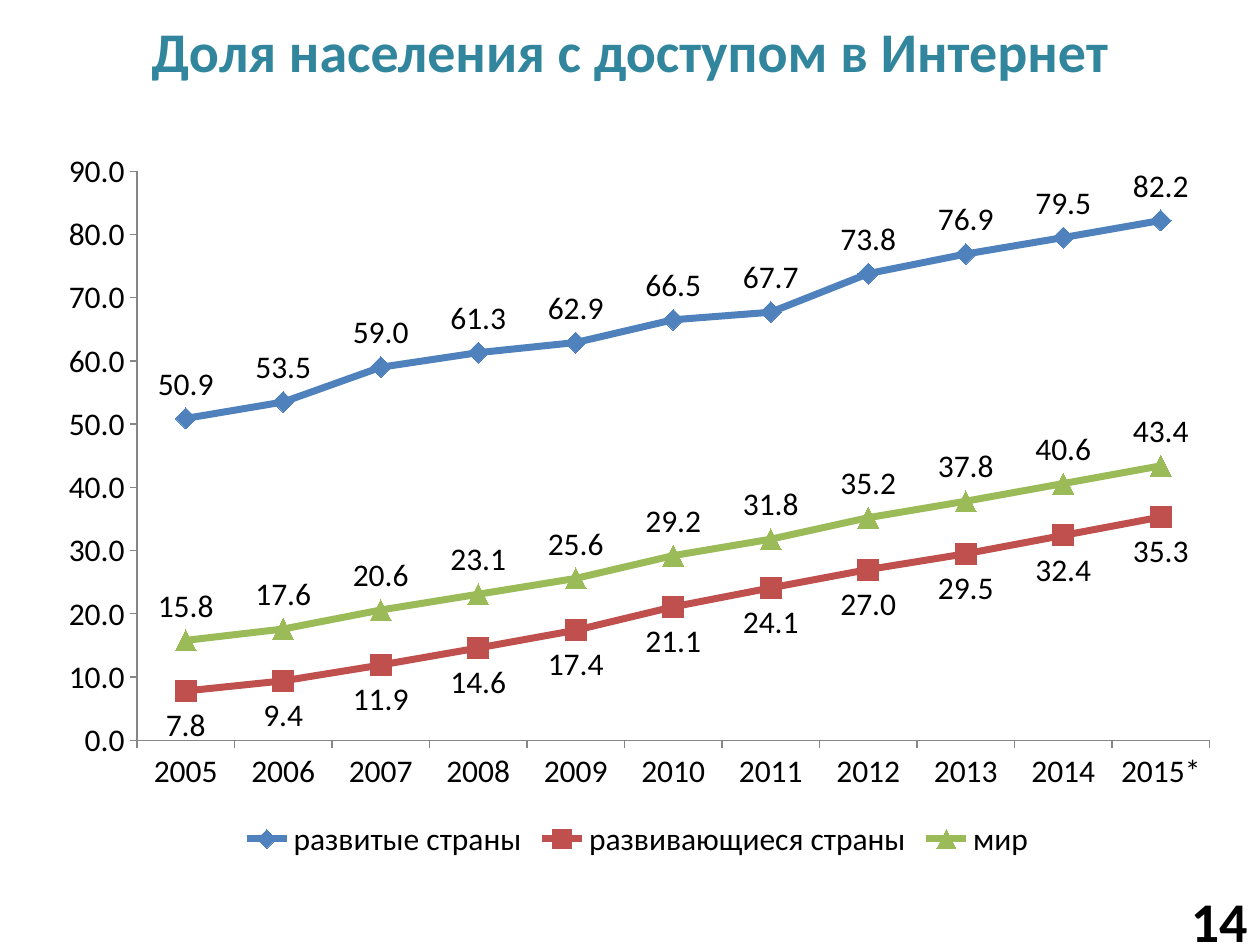
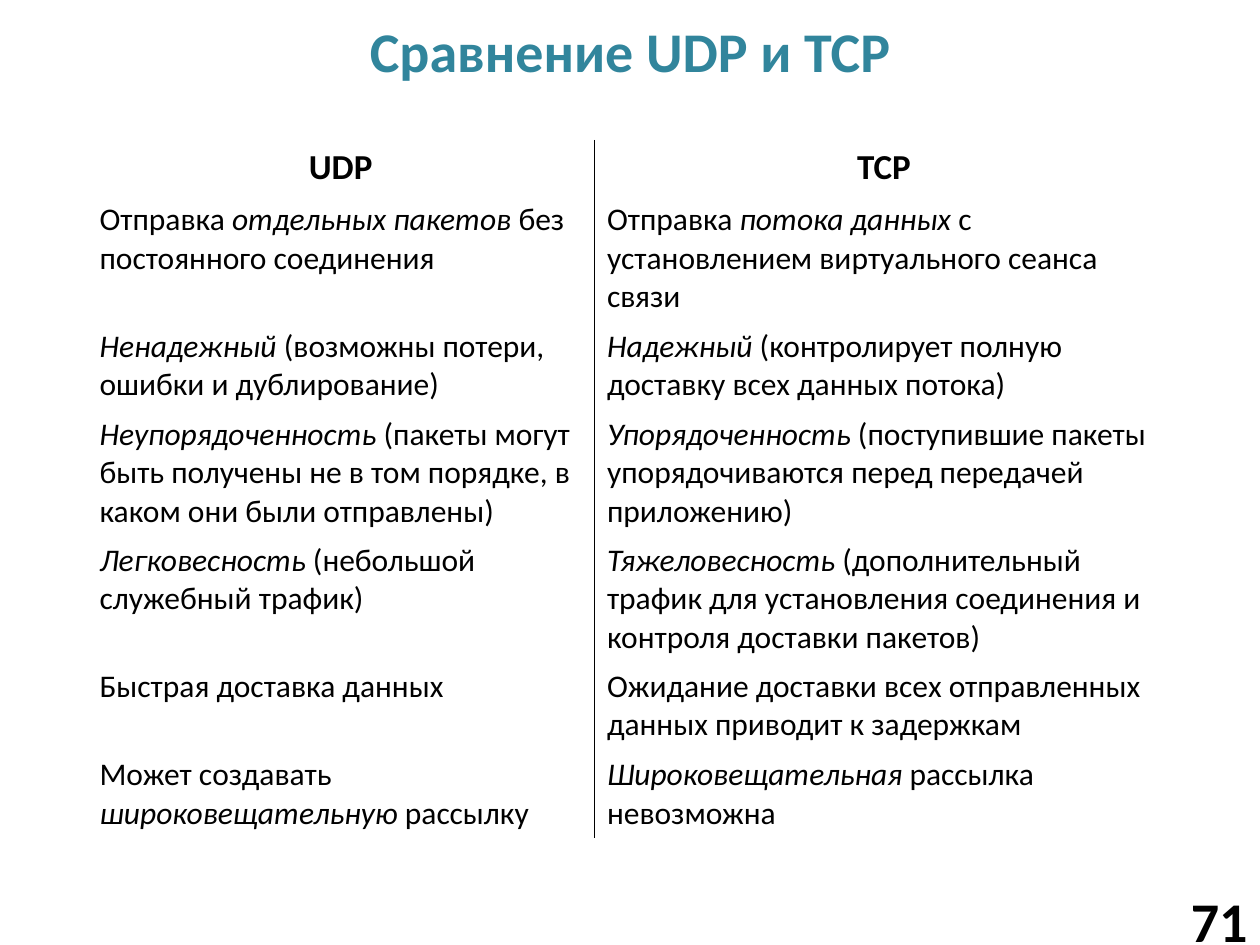
from lxml import etree
from pptx import Presentation
from pptx.chart.data import CategoryChartData
from pptx.dml.color import RGBColor
from pptx.enum.chart import (XL_CHART_TYPE, XL_LABEL_POSITION, XL_LEGEND_POSITION,
                             XL_MARKER_STYLE, XL_TICK_MARK)
from pptx.enum.text import MSO_ANCHOR, PP_ALIGN
from pptx.oxml import parse_xml
from pptx.oxml.ns import nsdecls, qn
from pptx.util import Pt

LINES = XL_CHART_TYPE.LINE_MARKERS
ABOVE, BELOW = XL_LABEL_POSITION.ABOVE, XL_LABEL_POSITION.BELOW
BOTTOM, OUTSIDE = XL_LEGEND_POSITION.BOTTOM, XL_TICK_MARK.OUTSIDE
DIAMOND, SQUARE = XL_MARKER_STYLE.DIAMOND, XL_MARKER_STYLE.SQUARE
TRIANGLE = XL_MARKER_STYLE.TRIANGLE
MIDDLE = MSO_ANCHOR.MIDDLE
LEFT, CENTER, RIGHT = PP_ALIGN.LEFT, PP_ALIGN.CENTER, PP_ALIGN.RIGHT

TEAL = RGBColor(0x31, 0x85, 0x9C)
BLACK = RGBColor(0, 0, 0)
GRAY = RGBColor(0x86, 0x86, 0x86)
BLUE = RGBColor(0x4F, 0x81, 0xBD)
RED = RGBColor(0xC0, 0x50, 0x4D)
GREEN = RGBColor(0x9B, 0xBB, 0x59)

HEAD = {"name": "Calibri", "size": Pt(32), "bold": True}
BODY = {"name": "Calibri", "size": Pt(18), "bold": False}
TOP = {**BODY, "size": Pt(20), "bold": True}
PLAIN = "{2D5ABB26-0587-4C30-8999-92F81FD0307C}"  # table style with no grid

YEARS = [str(year) for year in range(2005, 2015)] + ["2015*"]
SERIES = [
    ("развитые страны", BLUE, DIAMOND, ABOVE,
     (50.9, 53.5, 59, 61.3, 62.9, 66.5, 67.7, 73.8, 76.9, 79.5, 82.2)),
    ("развивающиеся страны", RED, SQUARE, BELOW,
     (7.8, 9.4, 11.9, 14.6, 17.4, 21.1, 24.1, 27, 29.5, 32.4, 35.3)),
    ("мир", GREEN, TRIANGLE, ABOVE,
     (15.8, 17.6, 20.6, 23.1, 25.6, 29.2, 31.8, 35.2, 37.8, 40.6, 43.4)),
]

# Words between asterisks are italic
ROWS = [
    ("UDP", "TCP"),
    ("Отправка *отдельных пакетов* без постоянного соединения",
     "Отправка *потока данных* с установлением виртуального сеанса связи"),
    ("*Ненадежный* (возможны потери, ошибки и дублирование)",
     "*Надежный* (контролирует полную доставку всех данных потока)"),
    ("*Неупорядоченность* (пакеты могут быть получены не в том порядке, "
     "в каком они были отправлены)",
     "*Упорядоченность* (поступившие пакеты упорядочиваются перед передачей "
     "приложению)"),
    ("*Легковесность* (небольшой служебный трафик)",
     "*Тяжеловесность* (дополнительный трафик для установления соединения "
     "и контроля доставки пакетов)"),
    ("Быстрая доставка данных",
     "Ожидание доставки всех отправленных данных приводит к задержкам"),
    ("Может создавать *широковещательную* рассылку",
     "*Широковещательная* рассылка невозможна"),
]
WIDTHS = (290, 331)
HEIGHTS = (29, 46, 46, 65.5, 65.5, 46, 46)


def style(font, look, color=BLACK):
    for key, value in look.items():
        setattr(font, key, value)
    font.color.rgb = color


class Deck:
    def __init__(self):
        self.prs = Presentation()
        self.prs.slide_width, self.prs.slide_height = Pt(720), Pt(540)
        self.slide = None

    def page(self, title, number):
        self.slide = self.prs.slides.add_slide(self.prs.slide_layouts[6])
        self.text(title, (20, 3.6, 680.4, 49.7), CENTER, TEAL)
        self.text(str(number), (638, 511, 82, 29), RIGHT, BLACK)

    def text(self, words, box, align, color):
        frame = self.slide.shapes.add_textbox(*map(Pt, box)).text_frame
        frame.word_wrap, frame.vertical_anchor = True, MIDDLE
        self.fill(frame.paragraphs[0], words, HEAD, align, color)

    def fill(self, para, words, look, align, color=BLACK):
        para.alignment = align
        for place, part in enumerate(words.split("*")):
            if part:
                run = para.add_run()
                run.text = part
                style(run.font, {**look, "italic": place % 2 == 1}, color)

    def chart(self, box):
        data = CategoryChartData(number_format="0.0")
        data.categories = YEARS
        for name, *_, values in SERIES:
            data.add_series(name, values)
        chart = self.slide.shapes.add_chart(LINES, *map(Pt, box), data).chart
        style(chart.font, BODY)
        chart.has_title = False
        chart.has_legend = True
        chart.legend.position = BOTTOM
        chart.legend.include_in_layout = False
        chart.plots[0].vary_by_categories = False

        # Axes
        for axis in (chart.category_axis, chart.value_axis):
            axis.has_major_gridlines = False
            axis.major_tick_mark = OUTSIDE
            axis.format.line.color.rgb = GRAY
            axis.format.line.width = Pt(0.75)
        scale = chart.value_axis
        scale.minimum_scale, scale.maximum_scale, scale.major_unit = 0, 90, 10
        scale.tick_labels.number_format = "0.0"
        scale.tick_labels.number_format_is_linked = False

        # Lines, markers and value labels
        for line, (_, color, shape, place, _) in zip(chart.plots[0].series, SERIES):
            line.smooth = False
            line.format.line.color.rgb = color
            line.format.line.width = Pt(4)
            mark = line.marker
            mark.style, mark.size = shape, 12
            mark.format.fill.solid()
            mark.format.fill.fore_color.rgb = color
            mark.format.line.color.rgb = color
            labels = line.data_labels
            style(labels.font, BODY)
            for key, value in {"show_value": True, "position": place,
                               "number_format": "0.0",
                               "number_format_is_linked": False}.items():
                setattr(labels, key, value)
        self.inset(chart, {"x": 0.08, "y": 0.05, "w": 0.9, "h": 0.78})

    def inset(self, chart, area):
        # Fixed place for the inner plot area
        plot = chart.element.find(".//" + qn("c:plotArea"))
        for old in plot.findall(qn("c:layout")):
            plot.remove(old)
        layout = etree.Element(qn("c:layout"))
        manual = etree.SubElement(layout, qn("c:manualLayout"))
        parts = {"layoutTarget": "inner", "xMode": "edge", "yMode": "edge", **area}
        for tag, value in parts.items():
            etree.SubElement(manual, qn("c:" + tag), val=str(value))
        plot.insert(0, layout)

    def table(self, left, top):
        frame = self.slide.shapes.add_table(
            len(ROWS), len(WIDTHS), Pt(left), Pt(top),
            Pt(sum(WIDTHS)), Pt(sum(HEIGHTS)))
        table = frame.table
        table.first_row = table.horz_banding = False
        frame.element.find(".//" + qn("a:tableStyleId")).text = PLAIN
        for col, width in zip(table.columns, WIDTHS):
            col.width = Pt(width)
        for row, height, words in zip(table.rows, HEIGHTS, ROWS):
            row.height = Pt(height)
            head = words is ROWS[0]
            for cell, part in zip(row.cells, words):
                cell.fill.background()
                self.fill(cell.text_frame.paragraphs[0], part,
                          TOP if head else BODY, CENTER if head else LEFT)

        # Rule between the two columns
        for place, props in enumerate(frame.element.iter(qn("a:tcPr"))):
            side = "lnL" if place % 2 else "lnR"
            props.insert(0, parse_xml(
                f'<a:{side} {nsdecls("a")} w="{Pt(1)}"><a:solidFill>'
                f'<a:srgbClr val="{BLACK}"/></a:solidFill></a:{side}>'))


def main():
    deck = Deck()

    # Internet access by year
    deck.page("Доля населения с доступом в Интернет", 14)
    deck.chart((23.8, 77, 681, 417))

    # Protocol comparison
    deck.page("Сравнение UDP и TCP", 71)
    deck.table(49.7, 80)

    deck.prs.save("out.pptx")


if __name__ == "__main__":
    main()
